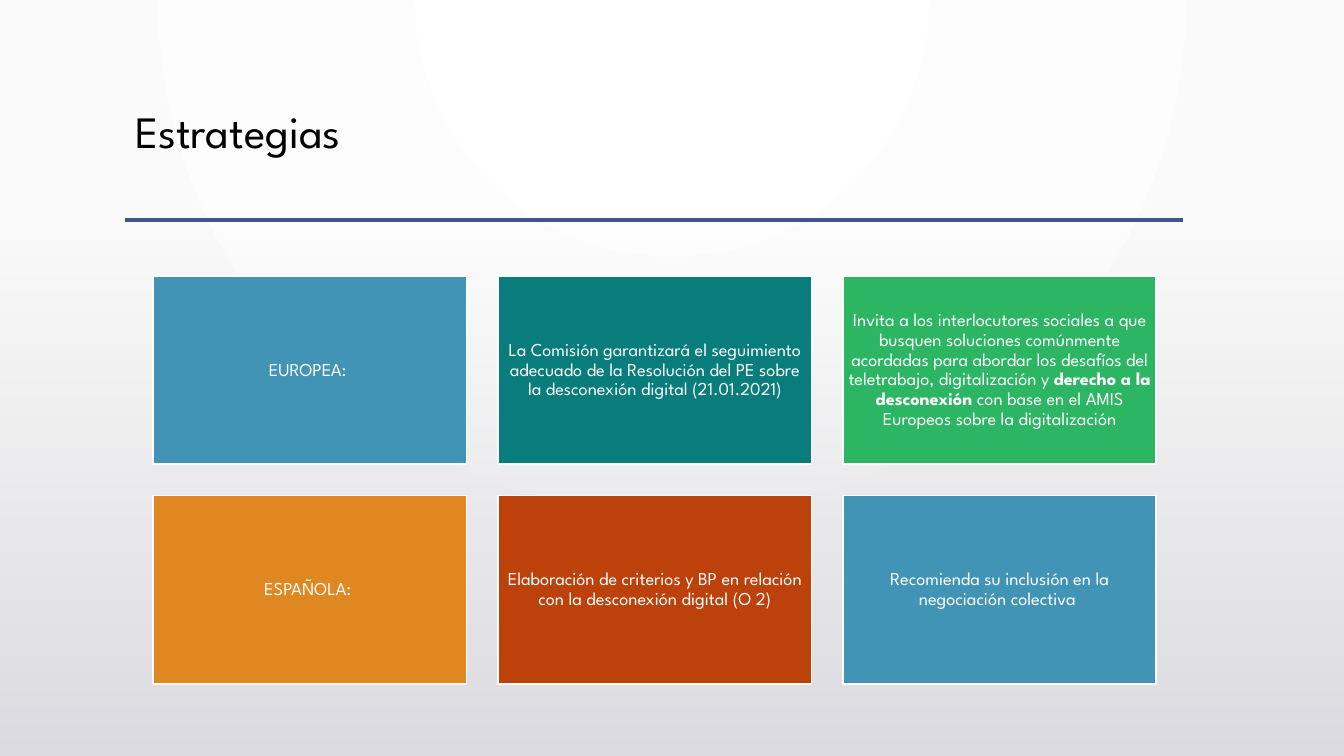
from lxml.etree import SubElement
from pptx import Presentation
from pptx.dml.color import RGBColor
from pptx.enum.shapes import MSO_CONNECTOR, MSO_SHAPE
from pptx.enum.text import MSO_ANCHOR, PP_ALIGN
from pptx.oxml import parse_xml
from pptx.oxml.ns import nsdecls, qn
from pptx.util import Cm, Pt

FONT = "League Spartan"
BLACK = RGBColor(0x00, 0x00, 0x00)
WHITE = RGBColor(0xFF, 0xFF, 0xFF)
PALE = RGBColor(0xFA, 0xFA, 0xFA)
MIST = RGBColor(0xDC, 0xDC, 0xE0)
INDIGO = RGBColor(0x41, 0x55, 0x88)
BLUE = RGBColor(0x42, 0x94, 0xB6)
TEAL = RGBColor(0x08, 0x7D, 0x7C)
GREEN = RGBColor(0x2C, 0xB6, 0x63)
ORANGE = RGBColor(0xDF, 0x88, 0x22)
RUST = RGBColor(0xBC, 0x41, 0x0A)

SLIDE_WIDTH, SLIDE_HEIGHT = Cm(33.87), Cm(19.05)
CARD_WIDTH, CARD_HEIGHT, CARD_GAP = Cm(7.9), Cm(4.74), Cm(0.79)
CARDS_LEFT, CARDS_TOP = Cm(3.86), Cm(6.96)

CARD_FRAME = {
    "word_wrap": True,
    "vertical_anchor": MSO_ANCHOR.MIDDLE,
    **dict.fromkeys(
        ("margin_left", "margin_top", "margin_right", "margin_bottom"), Cm(0.13)
    ),
}
TITLE_FRAME = {"word_wrap": True, "vertical_anchor": MSO_ANCHOR.TOP}
CARD_FONT = {"name": FONT, "size": Pt(13)}
TITLE_FONT = {"name": FONT, "size": Pt(32), "bold": False}

# Each card: fill colour and its (text, bold) pieces
STRATEGIES = [
    [
        (BLUE, [("EUROPEA: ", False)]),
        (TEAL, [("La Comisión garantizará el seguimiento adecuado de la Resolución "
                 "del PE sobre la desconexión digital (21.01.2021)", False)]),
        (GREEN, [("Invita a los interlocutores sociales a que busquen soluciones "
                  "comúnmente acordadas para abordar los desafíos del teletrabajo, "
                  "digitalización y ", False),
                 ("derecho a la desconexión ", True),
                 ("con base en el AMIS Europeos sobre la digitalización", False)]),
    ],
    [
        (ORANGE, [("ESPAÑOLA: ", False)]),
        (RUST, [("Elaboración de criterios y BP en relación con la desconexión "
                 "digital (O 2)", False)]),
        (BLUE, [("Recomienda su inclusión en la negociación colectiva ", False)]),
    ],
]


def apply_format(target, values):
    for attribute, value in values.items():
        setattr(target, attribute, value)


def set_gradient(fill, owner, stops, direction):
    """Fill with (position, colour, opacity) stops, all in percent."""
    fill.gradient()
    gradient = owner.xpath(".//a:gradFill")[0]
    stop_xml = "".join(
        f'<a:gs pos="{position * 1000}"><a:srgbClr val="{color}">'
        f'<a:alpha val="{opacity * 1000}"/></a:srgbClr></a:gs>'
        for position, color, opacity in stops
    )
    gradient.getparent().replace(gradient, parse_xml(
        f'<a:gradFill {nsdecls("a")} rotWithShape="1">'
        f"<a:gsLst>{stop_xml}</a:gsLst>{direction}</a:gradFill>"
    ))


def add_backdrop(slide):
    set_gradient(
        slide.background.fill, slide.element,
        [(0, WHITE, 100), (100, PALE, 100)],
        '<a:path path="circle">'
        '<a:fillToRect l="43000" t="0" r="43000" b="100000"/></a:path>',
    )


def add_title(slide, text):
    title = slide.shapes.title
    apply_format(title, {"left": Cm(3.15), "top": Cm(2.64),
                         "width": Cm(26.67), "height": Cm(2.92)})
    apply_format(title.text_frame, TITLE_FRAME)
    paragraph = title.text_frame.paragraphs[0]
    apply_format(paragraph, {"alignment": PP_ALIGN.LEFT, "line_spacing": 0.9})
    run = paragraph.add_run()
    run.text = text
    apply_format(run.font, TITLE_FONT)
    run.font.color.rgb = BLACK


def add_title_rule(slide):
    rule = slide.shapes.add_connector(
        MSO_CONNECTOR.STRAIGHT, Cm(3.15), Cm(5.54), Cm(29.82), Cm(5.54)
    )
    rule.line.color.rgb = INDIGO
    rule.line.width = Pt(2.5)
    SubElement(rule.element.spPr, qn("a:effectLst"))


def add_lower_fade(slide):
    top = Cm(5.61)
    fade = slide.shapes.add_shape(
        MSO_SHAPE.RECTANGLE, 0, top, SLIDE_WIDTH, SLIDE_HEIGHT - top
    )
    fade.shadow.inherit = False
    fade.line.fill.background()
    set_gradient(fade.fill, fade.element, [(0, MIST, 0), (100, MIST, 100)],
                 '<a:lin ang="5400000" scaled="0"/>')


def add_card(slide, left, top, color, pieces):
    card = slide.shapes.add_shape(
        MSO_SHAPE.RECTANGLE, left, top, CARD_WIDTH, CARD_HEIGHT
    )
    card.shadow.inherit = False
    card.fill.solid()
    card.fill.fore_color.rgb = color
    card.line.color.rgb = WHITE
    card.line.width = Pt(1.25)
    apply_format(card.text_frame, CARD_FRAME)
    paragraph = card.text_frame.paragraphs[0]
    apply_format(paragraph, {"alignment": PP_ALIGN.CENTER, "line_spacing": 0.9})
    for text, bold in pieces:
        run = paragraph.add_run()
        run.text = text
        apply_format(run.font, {**CARD_FONT, "bold": bold})
        run.font.color.rgb = WHITE


def main():
    presentation = Presentation()
    presentation.slide_width = SLIDE_WIDTH
    presentation.slide_height = SLIDE_HEIGHT
    slide = presentation.slides.add_slide(presentation.slide_layouts[5])

    # Background and heading
    add_backdrop(slide)
    add_title(slide, "Estrategias")
    add_title_rule(slide)
    add_lower_fade(slide)

    # Strategy cards: one row for each scope
    for row, strategy in enumerate(STRATEGIES):
        for column, (color, pieces) in enumerate(strategy):
            add_card(
                slide,
                CARDS_LEFT + column * (CARD_WIDTH + CARD_GAP),
                CARDS_TOP + row * (CARD_HEIGHT + CARD_GAP),
                color, pieces,
            )

    presentation.save("out.pptx")


if __name__ == "__main__":
    main()
